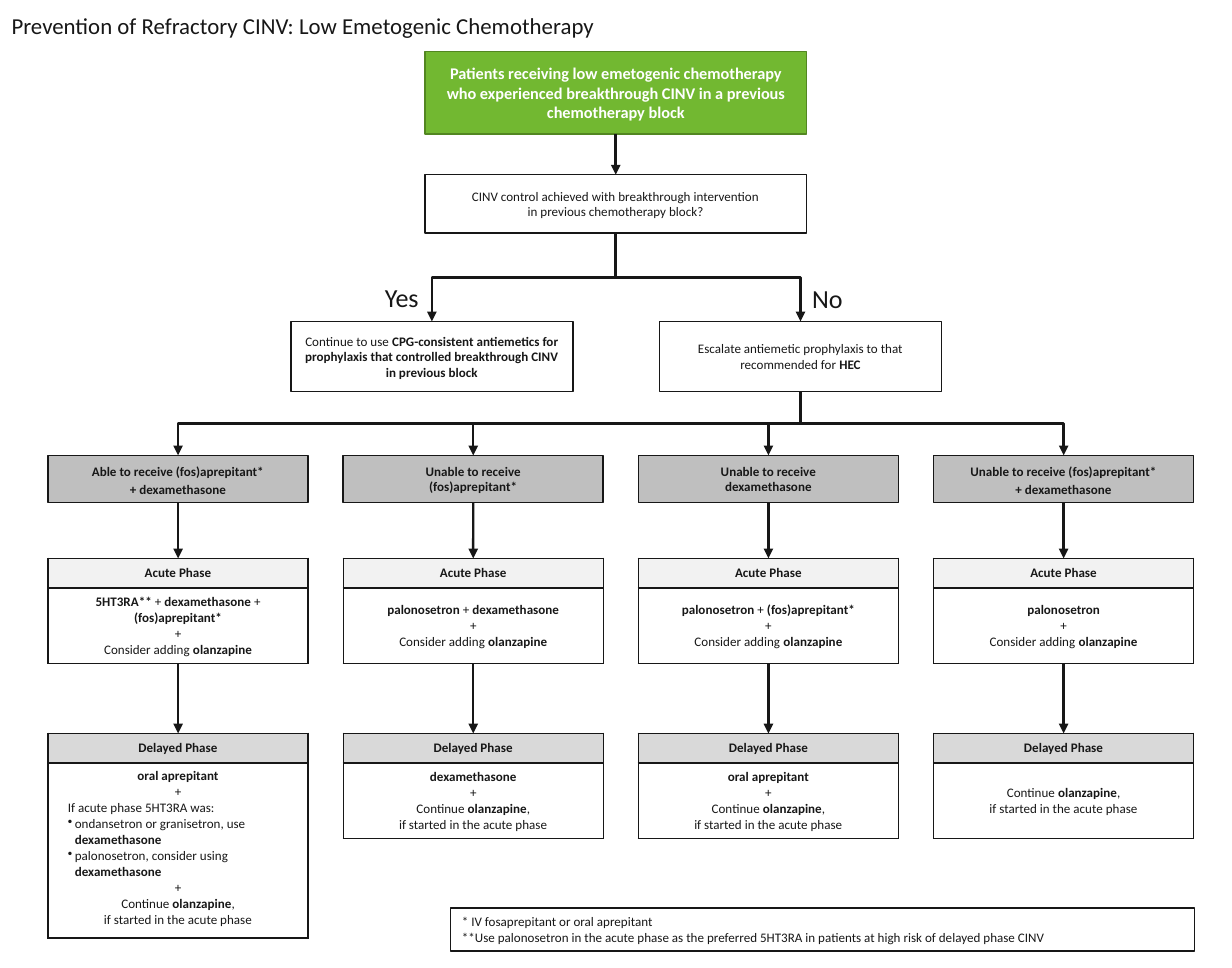
from lxml import etree
from pptx import Presentation, util as u
from pptx.dml.color import RGBColor
from pptx.enum import shapes, text
from pptx.oxml.ns import qn

Cm, Pt = u.Cm, u.Pt
COLORS = {
    "ink": "171717", "white": "FFFFFF", "green": "72B831", "green_line": "528621",
    "branch": "BFBFBF", "acute": "F2F2F2", "delayed": "D9D9D9",
}
ACUTE_TAIL = ["+", "Consider adding |olanzapine|"]
DELAYED_TAIL = ["Continue |olanzapine|,", "if started in the acute phase"]
COLUMNS = [
    {"branch": ["|Able to receive (fos)aprepitant*|", "|+ dexamethasone|"], "spacing": 11.1,
     "acute": ["|5HT3RA**| + |dexamethasone| + |(fos)aprepitant*|"] + ACUTE_TAIL,
     "delayed": ["|oral aprepitant|", "+", "<If acute phase 5HT3RA was:",
                 "•ondansetron or granisetron, use |dexamethasone|",
                 "•palonosetron, consider using |dexamethasone|", "+"] + DELAYED_TAIL,
     "delayed_height": 3.79},
    {"branch": ["|Unable to receive|", "|(fos)aprepitant*|"],
     "acute": ["|palonosetron| + |dexamethasone|"] + ACUTE_TAIL,
     "delayed": ["|dexamethasone|", "+"] + DELAYED_TAIL},
    {"branch": ["|Unable to receive|", "|dexamethasone|"],
     "acute": ["|palonosetron| + |(fos)aprepitant*|"] + ACUTE_TAIL,
     "delayed": ["|oral aprepitant|", "+"] + DELAYED_TAIL},
    {"branch": ["|Unable to receive (fos)aprepitant*|", "|+ dexamethasone|"], "spacing": 11.1,
     "acute": ["|palonosetron|"] + ACUTE_TAIL,
     "delayed": DELAYED_TAIL},
]


def rgb(name):
    """Return the named colour."""
    return RGBColor.from_string(COLORS[name])


def write(tf, lines, size=8, color="ink", align="CENTER", spacing=None):
    """Write paragraphs; bars toggle bold, a leading < or • indents to the left."""
    for i, line in enumerate(lines):
        p = tf.paragraphs[0] if i == 0 else tf.add_paragraph()
        p.alignment = getattr(text.PP_ALIGN, align)
        p.font.name, p.font.size = "Calibri", Pt(size)
        p.font.color.rgb = rgb(color)
        if spacing:
            p.line_spacing = Pt(spacing)
        if line[0] in "<•":
            p.alignment = text.PP_ALIGN.LEFT
            pPr = p._p.get_or_add_pPr()
            pPr.set("marL", str(Cm(0.48)))
            pPr.set("indent", str(Cm(-0.15)))
            if line[0] == "•":
                bullet = etree.Element(qn("a:buChar"), char="•")
                pPr.find(qn("a:defRPr")).addprevious(bullet)
            line = line[1:]
        for j, part in enumerate(line.split("|")):
            if part:
                r = p.add_run()
                r.text = part
                r.font.bold = j % 2 == 1


def add_box(s, left, top, width, height, lines, fill=None, line="ink", anchor="MIDDLE", **style):
    """Add an outlined rectangle with text."""
    sp = s.shapes.add_shape(shapes.MSO_SHAPE.RECTANGLE, Cm(left), Cm(top), Cm(width), Cm(height))
    sp.shadow.inherit = False
    if fill:
        sp.fill.solid()
        sp.fill.fore_color.rgb = rgb(fill)
    else:
        sp.fill.background()
    sp.line.color.rgb = rgb(line)
    sp.line.width = Pt(1)
    sp.text_frame.word_wrap = True
    sp.text_frame.vertical_anchor = getattr(text.MSO_ANCHOR, anchor)
    write(sp.text_frame, lines, **style)
    return sp


def add_label(s, left, top, width, height, label, size, anchor="TOP"):
    """Add left-aligned plain text."""
    tf = s.shapes.add_textbox(Cm(left), Cm(top), Cm(width), Cm(height)).text_frame
    tf.word_wrap = True
    tf.vertical_anchor = getattr(text.MSO_ANCHOR, anchor)
    write(tf, [label], size=size, align="LEFT")


def style_arrow(arrow):
    """Give a connector its line, arrowhead and flat look."""
    arrow.line.color.rgb = rgb("ink")
    arrow.line.width = Pt(1.5)
    etree.SubElement(arrow.line._get_or_add_ln(), qn("a:tailEnd"), type="triangle")
    etree.SubElement(arrow._element.spPr, qn("a:effectLst"))


def add_arrow(s, x, top, bottom, source=None, target=None):
    """Add a straight downward arrow, joined to the boxes given."""
    arrow = s.shapes.add_connector(shapes.MSO_CONNECTOR.STRAIGHT, Cm(x), Cm(top), Cm(x), Cm(bottom))
    if source:
        arrow.begin_connect(source, 2)
    if target:
        arrow.end_connect(target, 0)
    style_arrow(arrow)


def add_elbow(s, source, target):
    """Add a bent arrow from the bottom of one box to the top of another."""
    x1, y1 = source.left + source.width // 2, source.top + source.height
    x2, y2 = target.left + target.width // 2, target.top
    arrow = s.shapes.add_connector(shapes.MSO_CONNECTOR.ELBOW, x1, y1, x2, y2)
    arrow.begin_connect(source, 2)
    arrow.end_connect(target, 0)
    drop, run = y2 - y1, abs(x2 - x1)
    xfrm = arrow._element.spPr.find(qn("a:xfrm"))
    for flip in ("flipH", "flipV"):
        xfrm.attrib.pop(flip, None)
    arrow.left, arrow.top = (x1 + x2 - drop) // 2, (y1 + y2 - run) // 2
    arrow.width, arrow.height = drop, run
    xfrm.set("rot", "5400000" if x2 < x1 else "16200000")
    if x2 > x1:
        xfrm.set("flipH", "1")
    style_arrow(arrow)


def add_phase(s, left, top, width, title, fill, lines, body_height=1.64):
    """Add a two-row table holding a phase title and its treatment."""
    heights = (0.64, body_height)
    table = s.shapes.add_table(2, 1, Cm(left), Cm(top), Cm(width), Cm(sum(heights))).table
    table.first_row = table.horz_banding = False
    tall = body_height > 2
    for i, (height, content) in enumerate(zip(heights, ([f"|{title}|"], lines))):
        table.rows[i].height = Cm(height)
        cell = table.cell(i, 0)
        cell.vertical_anchor = text.MSO_ANCHOR.TOP if tall and i else text.MSO_ANCHOR.MIDDLE
        cell.margin_left = cell.margin_right = Cm(0.1 if tall and i else 0.18)
        cell.margin_top = cell.margin_bottom = Cm(0.1)
        tcPr = cell._tc.get_or_add_tcPr()
        for side in ("lnL", "lnR", "lnT", "lnB"):
            ln = etree.SubElement(tcPr, qn(f"a:{side}"), w=str(Pt(1)))
            solid = etree.SubElement(ln, qn("a:solidFill"))
            etree.SubElement(solid, qn("a:srgbClr"), val=COLORS["ink"])
        if i == 0:
            cell.fill.solid()
            cell.fill.fore_color.rgb = rgb(fill)
        else:
            cell.fill.background()
        write(cell.text_frame, content)


def add_decision(s, left, top, width):
    """Draw the question and its two answers, returning the escalation box."""
    start_left, start_width, answer_width = left + 2.9, 8.26, 6.1
    start = add_box(s, start_left, top, start_width, 1.78,
                    ["|Patients receiving low emetogenic chemotherapy who experienced "
                     "breakthrough CINV in a previous chemotherapy block|"],
                    fill="green", line="green_line", size=10, color="white")
    question = add_box(s, start_left, top + 2.66, start_width, 1.27,
                       ["CINV control achieved with breakthrough intervention",
                        "in previous chemotherapy block?"])
    yes = add_box(s, left, top + 5.84, answer_width, 1.52,
                  ["Continue to use |CPG-consistent antiemetics for prophylaxis "
                   "that controlled breakthrough CINV in previous block|"])
    no = add_box(s, left + width - answer_width, top + 5.84, answer_width, 1.52,
                 ["Escalate antiemetic prophylaxis to that recommended for |HEC|"])
    add_arrow(s, left + width / 2, top + 1.78, top + 2.66, start, question)
    for answer in (yes, no):
        add_elbow(s, question, answer)
    add_label(s, left + 1.78, top + 4.85, 1.68, 0.94, "Yes", 16)
    add_label(s, left + 11.03, top + 4.87, 2.29, 0.94, "No", 16)
    return no


def add_pathway(s, left, top, width, column, source):
    """Draw one treatment column below the escalation box."""
    branch = add_box(s, left, top, width, 1.02, column["branch"], fill="branch",
                     spacing=column.get("spacing"))
    add_elbow(s, source, branch)
    middle, acute_top, delayed_top = left + width / 2, top + 2.23, top + 6.02
    add_phase(s, left, acute_top, width, "Acute Phase", "acute", column["acute"])
    add_phase(s, left, delayed_top, width, "Delayed Phase", "delayed", column["delayed"],
              column.get("delayed_height", 1.64))
    add_arrow(s, middle, top + 1.02, acute_top, branch)
    add_arrow(s, middle, acute_top + 2.28, delayed_top)


def main():
    """Build the flowchart slide."""
    prs = Presentation()
    prs.slide_width, prs.slide_height = Cm(26.67), Cm(20.96)
    s = prs.slides.add_slide(prs.slide_layouts[6])
    add_label(s, 0, 0, 26.67, 1.12,
              "Prevention of Refractory CINV: Low Emetogenic Chemotherapy", 14, "MIDDLE")
    escalate = add_decision(s, 6.3, 1.12, 14.08)
    for i, column in enumerate(COLUMNS):
        add_pathway(s, 1.04 + 6.39 * i, 9.86, 5.63, column, escalate)
    add_box(s, 9.75, 19.66, 16.11, 0.94,
            ["* IV fosaprepitant or oral aprepitant",
             "**Use palonosetron in the acute phase as the preferred 5HT3RA "
             "in patients at high risk of delayed phase CINV"], anchor="TOP", align="LEFT")
    prs.save("out.pptx")


if __name__ == "__main__":
    main()
